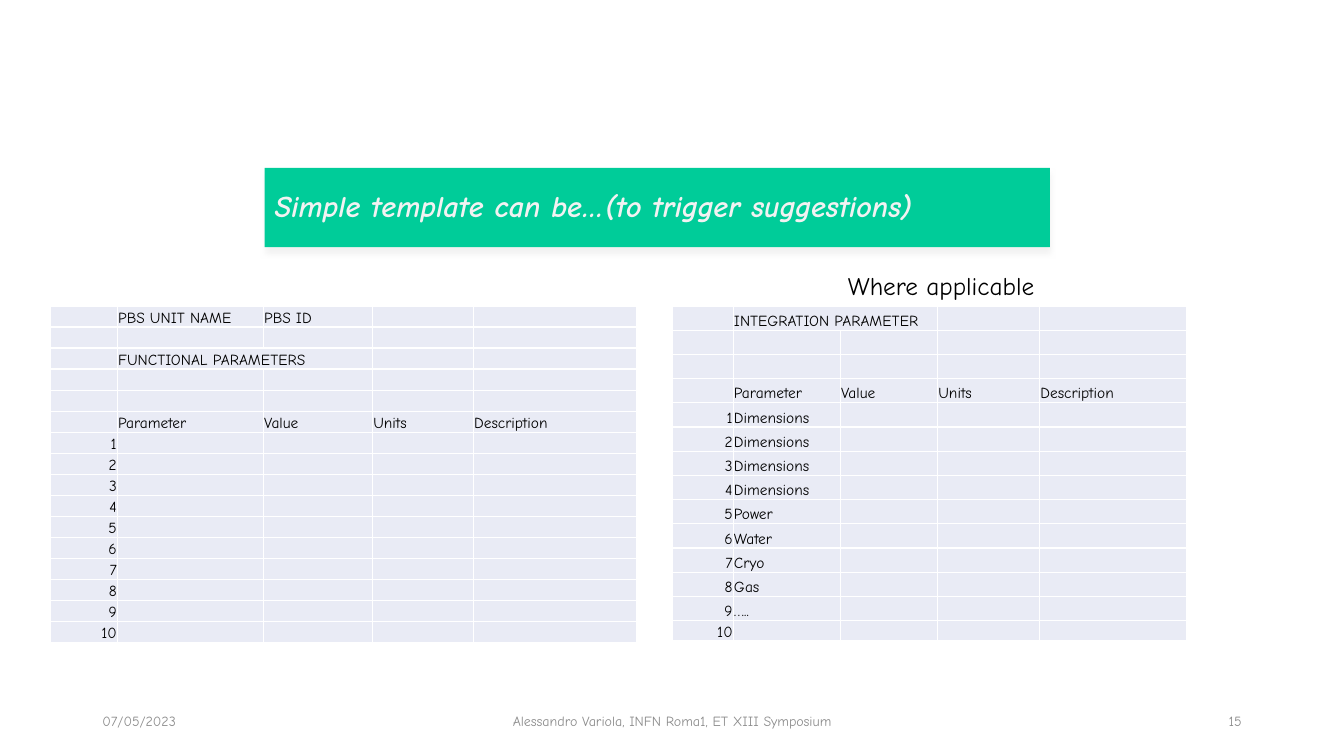
from dataclasses import dataclass

from lxml.etree import SubElement
from pptx import Presentation
from pptx.dml.color import RGBColor
from pptx.enum.text import MSO_ANCHOR as Anchor, MSO_AUTO_SIZE as AutoSize, PP_ALIGN as Align
from pptx.oxml import parse_xml
from pptx.oxml.ns import nsdecls, qn
from pptx.slide import Slide
from pptx.table import _Cell as Cell
from pptx.util import Cm, Pt

FONT = "Comic Neue"
COLORS = {
    "banner": "00CC99",
    "banner text": "F2F2F2",
    "footer": "8C8C8C",
    "text": "000000",
    "cell": "E9EBF5",
    "border": "FFFFFF",
}
TABLE_TOP = 7.71
CELL_SIZE = 11
CELL_MARGIN = Pt(0.5)
HEADINGS = ["", "Parameter", "Value", "Units", "Description"]


@dataclass
class Label:
    text: str
    left: float
    top: float
    width: float
    size: float
    color: str
    align: Align = Align.LEFT
    anchor: Anchor = Anchor.MIDDLE
    wrap: bool = True


@dataclass
class ParameterTable:
    left: float
    column_widths: list[float]
    row_heights: list[float]
    rows: list[list[str]]
    wide_row: int


def numbered_rows(names: list[str]) -> list[list[str]]:
    return [[str(number), name] for number, name in enumerate(names, start=1)]


LABELS = [
    Label("07/05/2023", 2.33, 17.65, 7.62, 10, "footer"),
    Label("Alessandro Variola, INFN Roma1, ET XIII Symposium",
          11.22, 17.65, 11.43, 10, "footer", Align.CENTER),
    Label("15", 23.92, 17.65, 7.62, 10, "footer", Align.RIGHT),
    Label("Where applicable", 21.12, 6.68, 5.69, 18, "text", anchor=Anchor.TOP, wrap=False),
]

TABLES = [
    ParameterTable(
        left=1.27,
        column_widths=[1.69, 3.68, 2.75, 2.54, 4.12],
        row_heights=[0.53] * 16,
        rows=[["", "PBS UNIT NAME", "PBS ID"], [], ["", "FUNCTIONAL PARAMETERS"], [], [],
              HEADINGS, *numbered_rows([""] * 10)],
        wide_row=2,
    ),
    ParameterTable(
        left=16.94,
        column_widths=[1.54, 2.7, 2.45, 2.57, 3.71],
        row_heights=[0.61] * 13 + [0.51],
        rows=[["", "INTEGRATION PARAMETER"], [], [], HEADINGS,
              *numbered_rows(["Dimensions"] * 4 + ["Power", "Water", "Cryo", "Gas", "…..", ""])],
        wide_row=0,
    ),
]


def color(name: str) -> RGBColor:
    return RGBColor.from_string(COLORS[name])


def format_paragraph(paragraph, size: float, color_name: str, align: Align) -> None:
    paragraph.alignment = align
    paragraph.font.name = FONT
    paragraph.font.size = Pt(size)
    paragraph.font.color.rgb = color(color_name)


def format_title(slide: Slide) -> None:
    title = slide.shapes.title
    title.left, title.top, title.width, title.height = Cm(6.67), Cm(4.23), Cm(19.79), Cm(2)
    title.fill.solid()
    title.fill.fore_color.rgb = color("banner")
    frame = title.text_frame
    frame.text = "Simple template can be…(to trigger suggestions)"
    frame.auto_size = AutoSize.NONE
    frame.vertical_anchor = Anchor.MIDDLE
    paragraph = frame.paragraphs[0]
    paragraph.line_spacing = 0.9
    format_paragraph(paragraph, 21.6, "banner text", Align.LEFT)
    paragraph.font.bold = True
    paragraph.font.italic = True
    # Soft shadow below the banner
    title.element.spPr.append(parse_xml(
        f'<a:effectLst {nsdecls("a")}>'
        f'<a:outerShdw blurRad="{Pt(4)}" dist="{Pt(4)}" dir="5400000" rotWithShape="0">'
        f'<a:srgbClr val="{COLORS["banner text"]}"/></a:outerShdw></a:effectLst>'))


def add_label(slide: Slide, label: Label) -> None:
    box = slide.shapes.add_textbox(Cm(label.left), Cm(label.top), Cm(label.width), Cm(1.02))
    frame = box.text_frame
    frame.text = label.text
    frame.word_wrap = label.wrap
    frame.vertical_anchor = label.anchor
    format_paragraph(frame.paragraphs[0], label.size, label.color, label.align)


def format_cell(cell: Cell, text: str, align: Align) -> None:
    cell.fill.solid()
    cell.fill.fore_color.rgb = color("cell")
    cell.vertical_anchor = Anchor.BOTTOM
    cell.margin_left = cell.margin_right = cell.margin_top = CELL_MARGIN
    cell.margin_bottom = 0
    paragraph = cell.text_frame.paragraphs[0]
    if text:
        paragraph.text = text
    format_paragraph(paragraph, CELL_SIZE, "text", align)
    if not text:
        # Keeps empty rows from growing to the default text size
        SubElement(paragraph._p, qn("a:endParaRPr"), sz=str(CELL_SIZE * 100))
    properties = cell._tc.get_or_add_tcPr()
    for position, side in enumerate(["lnL", "lnR", "lnT", "lnB"]):
        properties.insert(position, parse_xml(
            f'<a:{side} {nsdecls("a")} w="{Pt(1)}"><a:solidFill>'
            f'<a:srgbClr val="{COLORS["border"]}"/></a:solidFill></a:{side}>'))


def add_parameter_table(slide: Slide, content: ParameterTable) -> None:
    column_count = len(content.column_widths)
    table = slide.shapes.add_table(
        len(content.rows), column_count, Cm(content.left), Cm(TABLE_TOP),
        Cm(sum(content.column_widths)), Cm(sum(content.row_heights))).table
    table.first_row = False
    table.horz_banding = False
    for column, width in zip(table.columns, content.column_widths):
        column.width = Cm(width)
    for row, height in zip(table.rows, content.row_heights):
        row.height = Cm(height)
    for row_index, texts in enumerate(content.rows):
        padded = texts + [""] * (column_count - len(texts))
        for column_index, text in enumerate(padded):
            align = Align.LEFT if column_index else Align.RIGHT
            format_cell(table.cell(row_index, column_index), text, align)
    table.cell(content.wide_row, 1).merge(table.cell(content.wide_row, 2))


def main() -> None:
    presentation = Presentation()
    presentation.slide_width, presentation.slide_height = Cm(33.87), Cm(19.05)
    slide = presentation.slides.add_slide(presentation.slide_layouts.get_by_name("Title Only"))
    format_title(slide)
    for content in TABLES:
        add_parameter_table(slide, content)
    for label in LABELS:
        add_label(slide, label)
    presentation.save("out.pptx")


if __name__ == "__main__":
    main()
